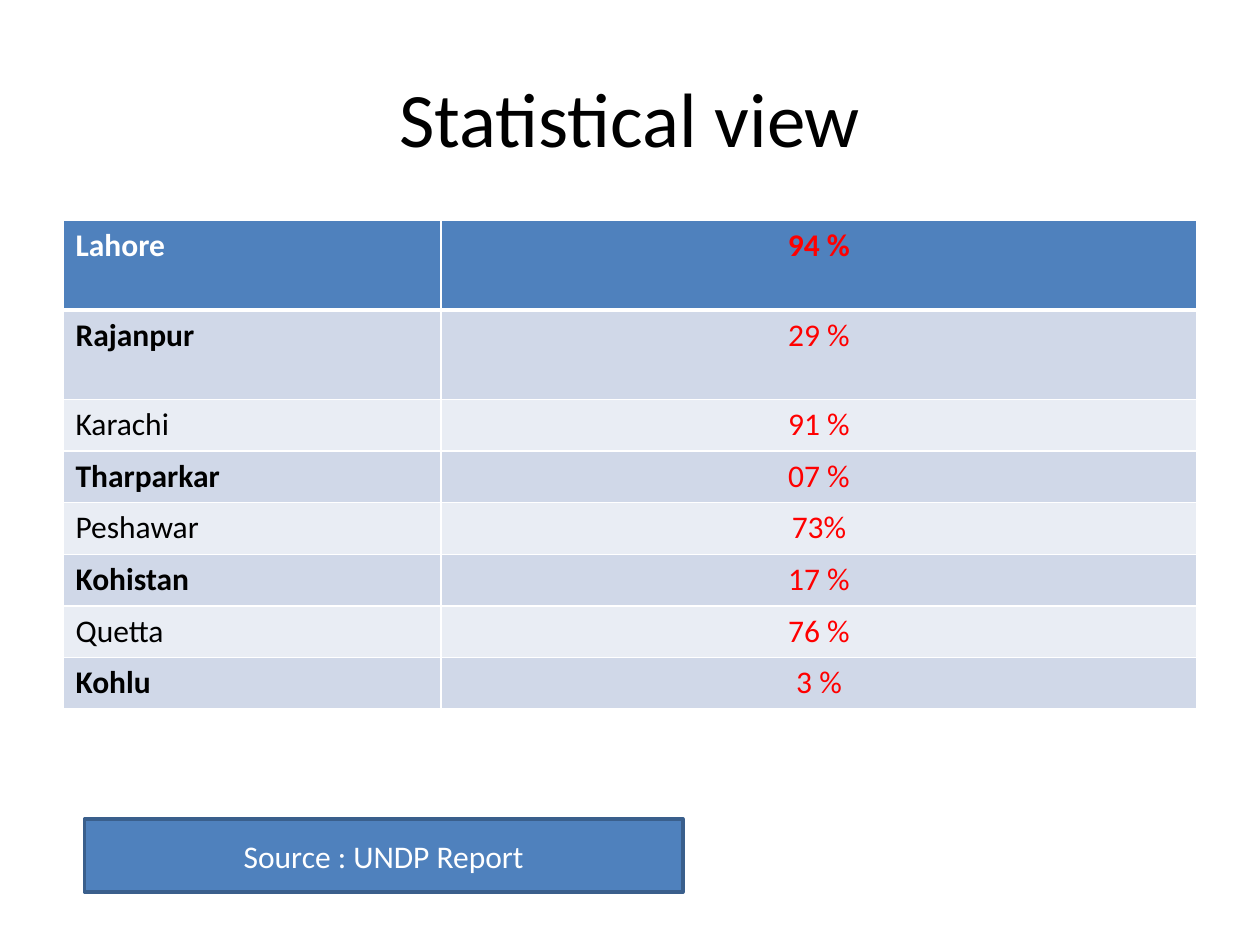
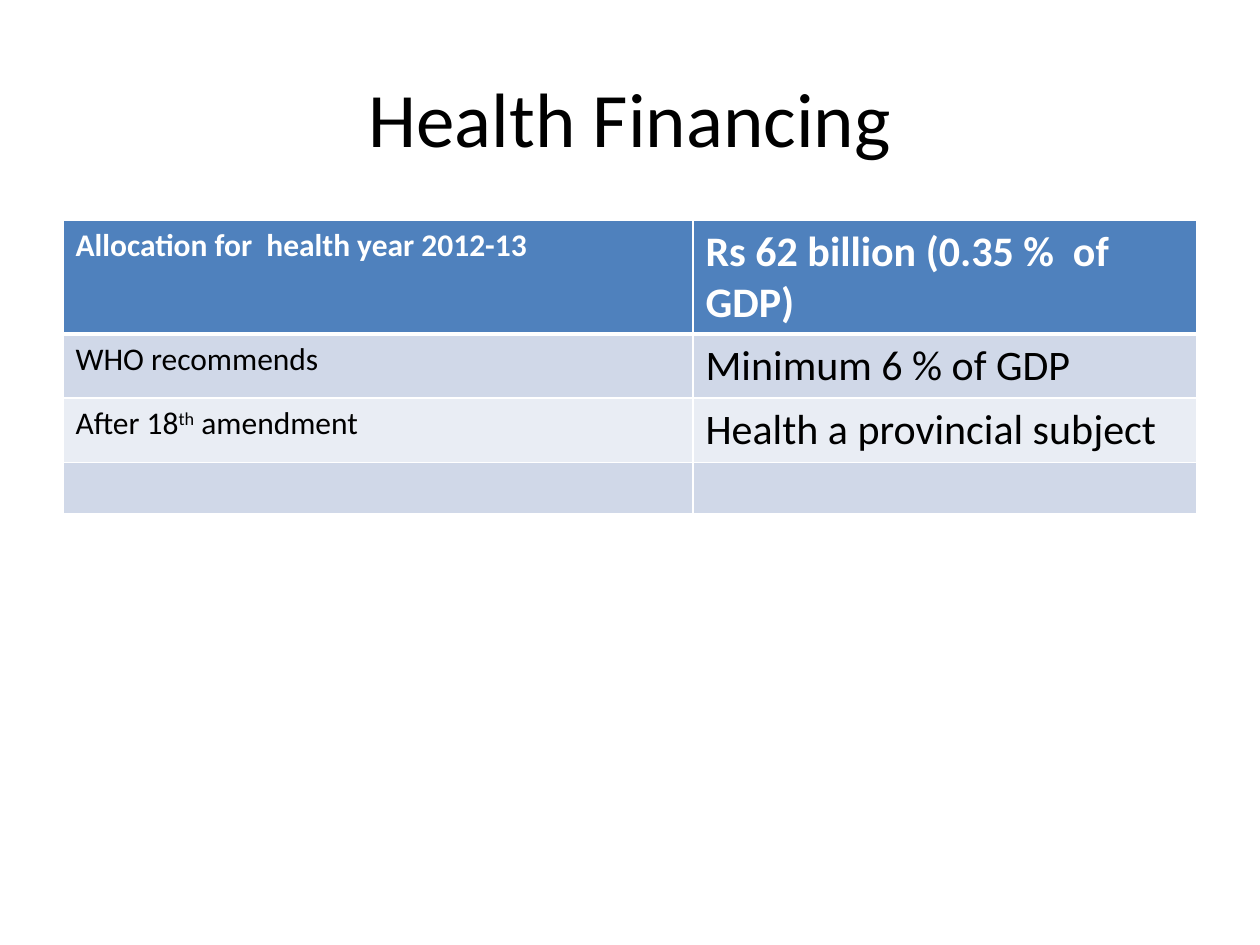
from lxml import etree
from pptx import Presentation
from pptx.dml.color import RGBColor
from pptx.enum.shapes import MSO_SHAPE
from pptx.enum.text import MSO_ANCHOR, PP_ALIGN
from pptx.oxml.ns import qn
from pptx.util import Inches, Pt

LEFT, CENTER = PP_ALIGN.LEFT, PP_ALIGN.CENTER
MIDDLE = MSO_ANCHOR.MIDDLE
RECTANGLE = MSO_SHAPE.RECTANGLE

FONT = "Calibri"
BLACK = RGBColor(0x00, 0x00, 0x00)
WHITE = RGBColor(0xFF, 0xFF, 0xFF)
RED = RGBColor(0xFF, 0x00, 0x00)
BLUE = RGBColor(0x4F, 0x81, 0xBD)
DARK_BLUE = RGBColor(0x3A, 0x5F, 0x8C)
BANDS = [RGBColor(0xE9, 0xED, 0xF4), RGBColor(0xD0, 0xD8, 0xE8)]

# Text between ^ marks is superscript.
SLIDES = [
    {
        "title": "Statistical view",
        "rows": [
            ("Lahore", "94 %"),
            ("Rajanpur", "29 %"),
            ("Karachi", "91 %"),
            ("Tharparkar", "07 %"),
            ("Peshawar", "73%"),
            ("Kohistan", "17 %"),
            ("Quetta", "76 %"),
            ("Kohlu", "3 %"),
        ],
        "column_widths": [3, 6],
        "row_heights": [0.71, 0.71] + [0.41] * 6,
        "value_style": (18, CENTER, RED),
        "bold_bands": True,
        "source": "Source : UNDP Report",
    },
    {
        "title": "Health Financing",
        "rows": [
            ("Allocation for  health year 2012-13", "Rs 62 billion (0.35 %  of GDP)"),
            ("WHO recommends", "Minimum 6 % of GDP"),
            ("After 18^th^ amendment", "Health a provincial subject"),
            ("", ""),
        ],
        "column_widths": [5, 4],
        "row_heights": [0.9, 0.51, 0.51, 0.41],
        "value_style": (24, LEFT, None),
        "bold_bands": False,
        "source": None,
    },
]


def write(frame, text, size, color, align=LEFT, bold=False):
    paragraph = frame.paragraphs[0]
    paragraph.alignment = align
    font = paragraph.font
    font.name, font.size, font.bold = FONT, Pt(size), bold
    font.color.rgb = color
    if not text:
        return
    for index, part in enumerate(text.split("^")):
        run = paragraph.add_run()
        run.text = part
        if index % 2:
            run._r.get_or_add_rPr().set("baseline", "30000")


def add_borders(cell, top, bottom):
    """Draw white cell borders; top and bottom are widths in points."""
    properties = cell._tc.get_or_add_tcPr()
    for side, width in (("L", 1), ("R", 1), ("T", top), ("B", bottom)):
        line = etree.SubElement(properties, qn(f"a:ln{side}"), w=str(Pt(width)))
        fill = etree.SubElement(line, qn("a:solidFill"))
        etree.SubElement(fill, qn("a:srgbClr"), val=str(WHITE))


prs = Presentation()
prs.slide_width, prs.slide_height = Inches(10), Inches(7.5)
blank = prs.slide_layouts[6]

for content in SLIDES:
    slide = prs.slides.add_slide(blank)

    title = slide.shapes.add_textbox(Inches(0.5), Inches(0.3), Inches(9), Inches(1.25)).text_frame
    title.word_wrap = True
    title.vertical_anchor = MIDDLE
    write(title, content["title"], 44, BLACK, CENTER)

    rows, heights = content["rows"], content["row_heights"]
    table = slide.shapes.add_table(
        len(rows), 2, Inches(0.5), Inches(1.75), Inches(9), Inches(sum(heights))
    ).table
    for column, width in zip(table.columns, content["column_widths"]):
        column.width = Inches(width)
    for row, height in zip(table.rows, heights):
        row.height = Inches(height)

    value_size, value_align, value_color = content["value_style"]
    for r, (label, value) in enumerate(rows):
        header = r == 0
        text_color = WHITE if header else BLACK
        bold_label = header or (content["bold_bands"] and r % 2 == 1)
        label_cell, value_cell = table.cell(r, 0), table.cell(r, 1)
        for cell in (label_cell, value_cell):
            add_borders(cell, 3 if r == 1 else 1, 3 if header else 1)
            cell.fill.solid()
            cell.fill.fore_color.rgb = BLUE if header else BANDS[r % 2]
        write(label_cell.text_frame, label, 18, text_color, bold=bold_label)
        write(value_cell.text_frame, value, value_size if value else 18,
              value_color or text_color, value_align, header)

    if content["source"]:
        source = slide.shapes.add_shape(
            RECTANGLE, Inches(0.67), Inches(6.5), Inches(4.75), Inches(0.58)
        )
        source.shadow.inherit = False
        source.fill.solid()
        source.fill.fore_color.rgb = BLUE
        source.line.color.rgb = DARK_BLUE
        source.line.width = Pt(2)
        source.text_frame.vertical_anchor = MIDDLE
        write(source.text_frame, content["source"], 18, WHITE, CENTER)

prs.save("out.pptx")
